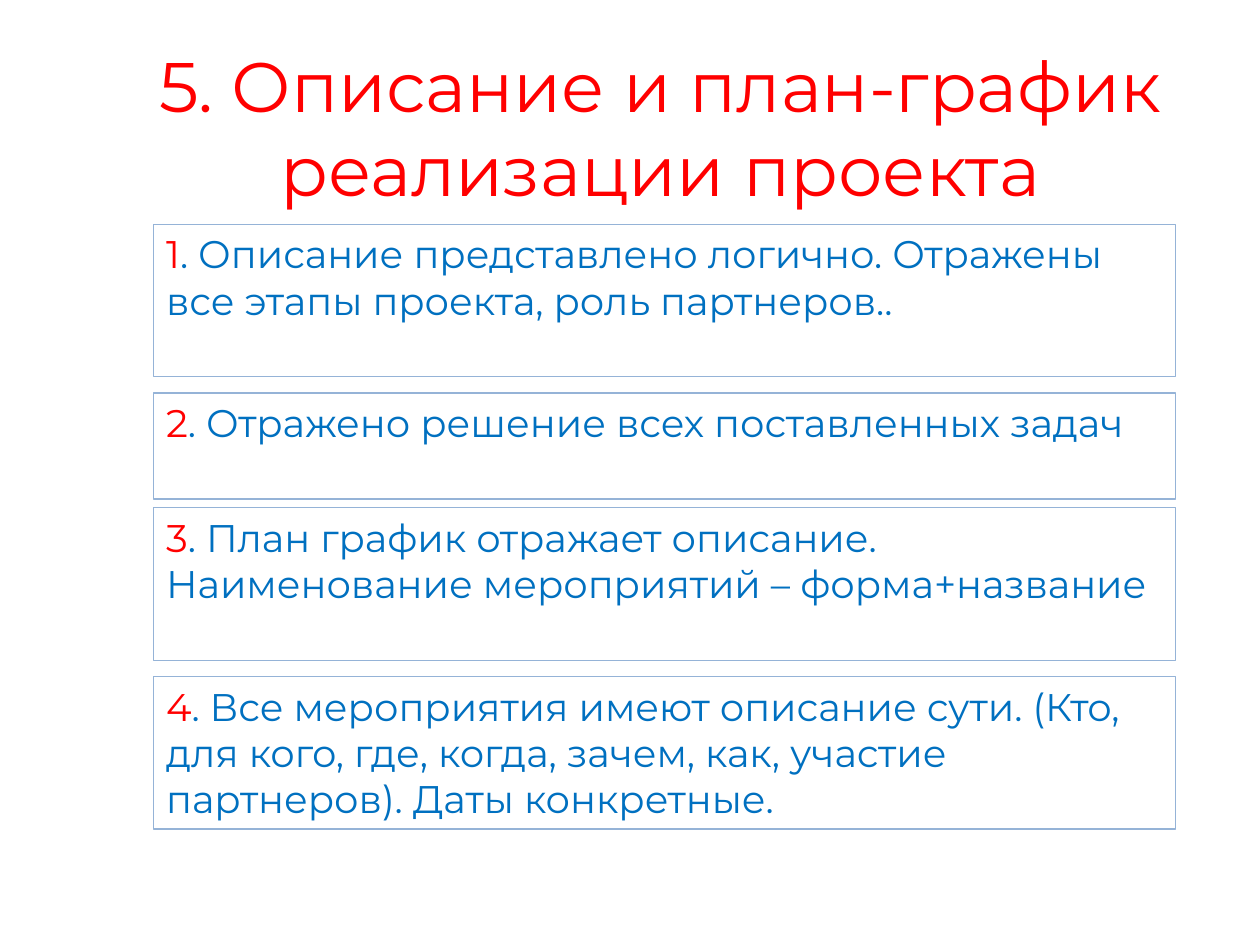
from dataclasses import dataclass

from pptx import Presentation
from pptx import util as u
from pptx.dml.color import RGBColor
from pptx.enum import shapes, text

FONT = "Montserrat"
RED, BLUE, BORDER = "FF0000", "0070C0", "95B3D7"
BOX_LEFT, BOX_WIDTH = 1.22, 8.11


@dataclass
class Criterion:
    top: float
    height: float
    wording: str


CRITERIA = [
    Criterion(1.78, 1.21, ". Описание представлено логично. Отражены все этапы проекта, роль партнеров.."),
    Criterion(3.12, 0.84, ". Отражено решение всех поставленных задач"),
    Criterion(4.03, 1.21, ". План график отражает описание. Наименование мероприятий – форма+название"),
    Criterion(5.37, 1.21, ". Все мероприятия имеют описание сути. (Кто, для кого, где, когда, зачем, "
                          "как, участие партнеров). Даты конкретные."),
]


def color(value: str) -> RGBColor:
    return RGBColor.from_string(value)


def format_run(run, size: float, hex_color: str) -> None:
    run.font.name = FONT
    run.font.size = u.Pt(size)
    run.font.color.rgb = color(hex_color)


def add_title(slide, wording: str) -> None:
    box = slide.shapes.add_textbox(u.Inches(0.75), u.Inches(0.29), u.Inches(8.98), u.Inches(1.45))
    box.text_frame.word_wrap = True
    box.text_frame.text = wording
    paragraph = box.text_frame.paragraphs[0]
    paragraph.alignment = text.PP_ALIGN.CENTER
    format_run(paragraph.runs[0], 40, RED)


def add_criterion(slide, number: int, criterion: Criterion) -> None:
    """Draw an outlined box with a red number before its blue wording."""
    shape = slide.shapes.add_shape(
        shapes.MSO_SHAPE.RECTANGLE, u.Inches(BOX_LEFT), u.Inches(criterion.top),
        u.Inches(BOX_WIDTH), u.Inches(criterion.height))
    shape.shadow.inherit = False
    shape.fill.background()
    shape.line.color.rgb = color(BORDER)
    shape.line.width = u.Pt(0.75)

    frame = shape.text_frame
    frame.word_wrap = True
    frame.vertical_anchor = text.MSO_ANCHOR.TOP
    frame.text = str(number)
    paragraph = frame.paragraphs[0]
    paragraph.alignment = text.PP_ALIGN.LEFT
    paragraph.add_run().text = criterion.wording
    for run, hex_color in zip(paragraph.runs, (RED, BLUE)):
        format_run(run, 22, hex_color)


def main() -> None:
    presentation = Presentation()
    presentation.slide_width = u.Inches(10)
    presentation.slide_height = u.Inches(7.5)
    slide = presentation.slides.add_slide(presentation.slide_layouts[6])
    add_title(slide, "5. Описание и план-график реализации проекта")
    for number, criterion in enumerate(CRITERIA, start=1):
        add_criterion(slide, number, criterion)
    presentation.save("out.pptx")


if __name__ == "__main__":
    main()
